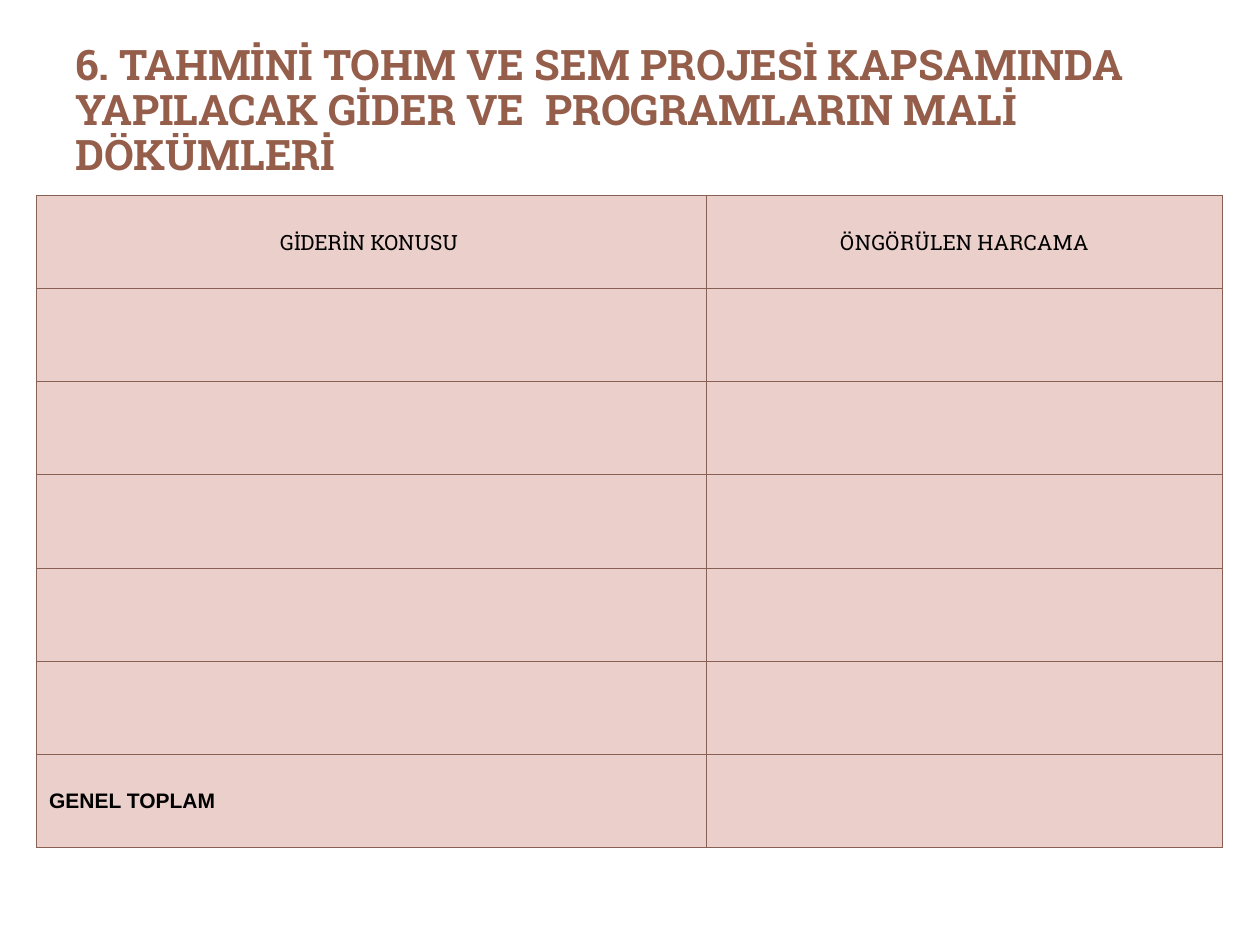
from dataclasses import dataclass

from lxml.etree import SubElement
from pptx import Presentation
from pptx.dml.color import RGBColor
from pptx.enum.text import MSO_ANCHOR as Anchor, PP_ALIGN as Align
from pptx.oxml.ns import qn
from pptx.util import Inches, Pt


@dataclass(frozen=True)
class Theme:
    title_color: str = "955E4B"
    text_color: str = "000000"
    cell_fill: str = "EACFCB"
    border: str = "896154"
    border_width: float = 0.75
    heading_font: str = "Roboto Slab"
    total_font: str = "Arial"
    title_size: int = 24
    cell_size: int = 12


THEME = Theme()
TITLE = ("6. TAHMİNİ TOHM VE SEM PROJESİ KAPSAMINDA  YAPILACAK GİDER VE  "
         "PROGRAMLARIN MALİ DÖKÜMLERİ")
HEADERS = ("GİDERİN KONUSU ", "ÖNGÖRÜLEN HARCAMA")
TOTAL_LABEL = "GENEL TOPLAM"
COLUMN_WIDTHS = (5.32, 4.09)
ROW_COUNT = 7
ROW_HEIGHT = 0.74


def write_text(frame, text, *, size, color, font, bold=False,
               align=Align.LEFT, line_spacing=None, space_before=None):
    paragraph = frame.paragraphs[0]
    paragraph.alignment = align
    paragraph.line_spacing = line_spacing
    paragraph.space_before = space_before
    run = paragraph.add_run()
    run.text = text
    run.font.size = Pt(size)
    run.font.name = font
    run.font.bold = bold
    run.font.color.rgb = RGBColor.from_string(color)


def add_title(slide):
    title = slide.shapes.add_textbox(Inches(0.5), Inches(0.3), Inches(9), Inches(0.77))
    frame = title.text_frame
    frame.word_wrap = True
    frame.vertical_anchor = Anchor.TOP
    write_text(frame, TITLE, size=THEME.title_size, color=THEME.title_color,
               font=THEME.heading_font, bold=True, line_spacing=0.9)


def style_cell(cell):
    """Draw the four borders, then fill the cell and centre it vertically."""
    properties = cell._tc.get_or_add_tcPr()
    for side in ("a:lnL", "a:lnR", "a:lnT", "a:lnB"):
        line = SubElement(properties, qn(side), w=str(Pt(THEME.border_width)))
        fill = SubElement(line, qn("a:solidFill"))
        SubElement(fill, qn("a:srgbClr"), val=THEME.border)
    cell.fill.solid()
    cell.fill.fore_color.rgb = RGBColor.from_string(THEME.cell_fill)
    cell.vertical_anchor = Anchor.MIDDLE


def write_cell(cell, text, **text_format):
    write_text(cell.text_frame, text, size=THEME.cell_size, color=THEME.text_color,
               space_before=Pt(0.2 * THEME.cell_size), **text_format)


def add_expense_table(slide):
    table = slide.shapes.add_table(
        ROW_COUNT, len(COLUMN_WIDTHS), Inches(0.29), Inches(1.55),
        Inches(sum(COLUMN_WIDTHS)), Inches(ROW_COUNT * ROW_HEIGHT)).table
    table.first_row = table.horz_banding = False
    for column, width in zip(table.columns, COLUMN_WIDTHS):
        column.width = Inches(width)
    for row in table.rows:
        row.height = Inches(ROW_HEIGHT)
    for cell in table.iter_cells():
        style_cell(cell)
    for index, header in enumerate(HEADERS):
        write_cell(table.cell(0, index), header, font=THEME.heading_font,
                   align=Align.CENTER)
    write_cell(table.cell(ROW_COUNT - 1, 0), TOTAL_LABEL, font=THEME.total_font,
               bold=True)


def main():
    deck = Presentation()
    deck.slide_width, deck.slide_height = Inches(10), Inches(7.5)
    slide = deck.slides.add_slide(deck.slide_layouts[6])
    add_title(slide)
    add_expense_table(slide)
    deck.save("out.pptx")


if __name__ == "__main__":
    main()
